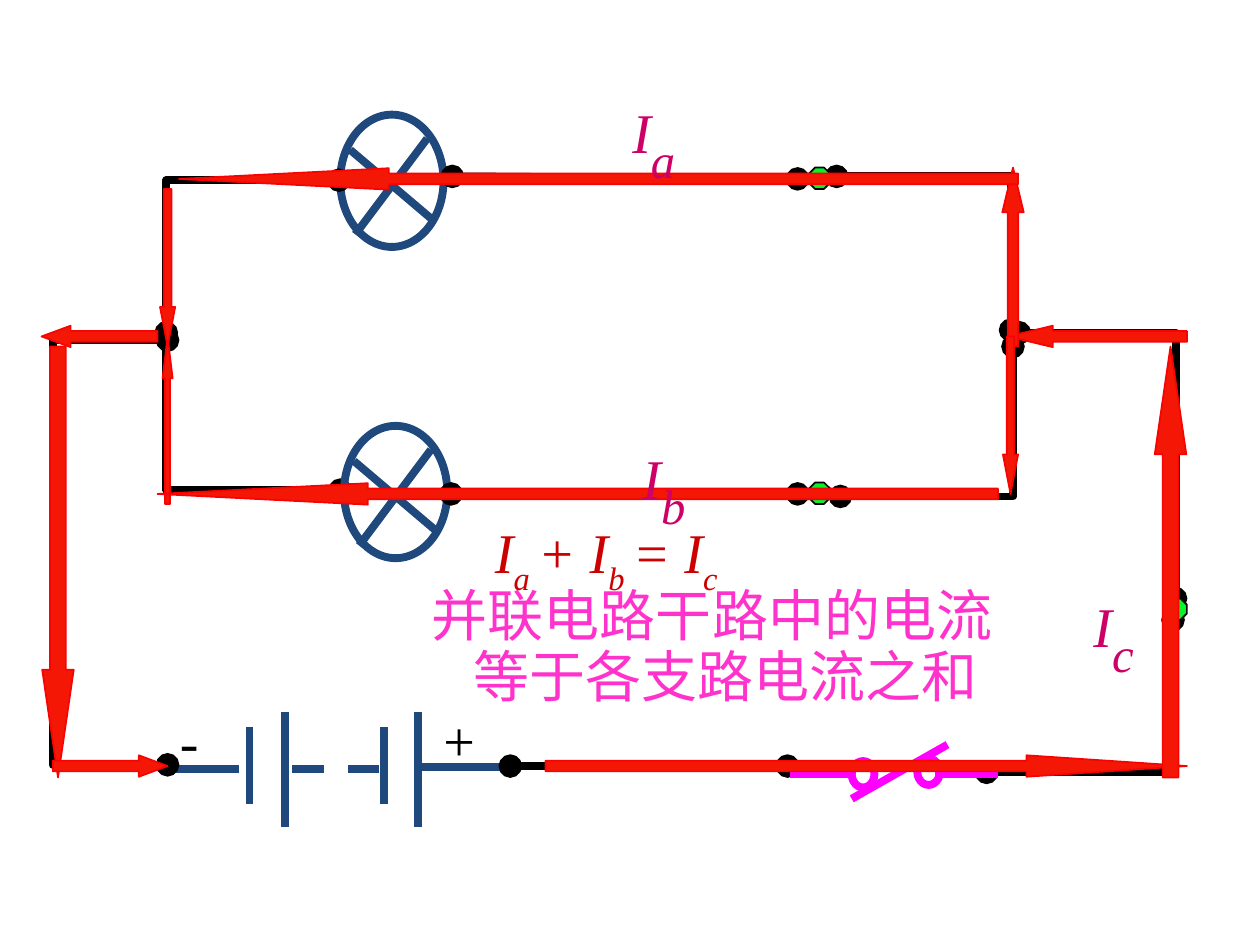
from math import atan2, degrees, hypot

from pptx import Presentation
from pptx.dml.color import RGBColor
from pptx.enum.dml import MSO_LINE
from pptx.enum.shapes import MSO_CONNECTOR, MSO_SHAPE
from pptx.enum.text import MSO_AUTO_SIZE
from pptx.oxml.ns import qn
from pptx.util import Inches, Pt
from lxml.etree import SubElement

COLORS = {
    "part": "1F497D", "wire": "000000", "switch": "FF00FF", "node": "08F229",
    "arrow": "F41706", "arrow_edge": "F70303", "label": "CC0066",
    "formula": "CC0000", "rule": "FF33CC",
}
FONT = "Times New Roman"
THICK = 4.5


def color(name):
    return RGBColor.from_string(COLORS[name])


def style_line(shape, color_name, width=THICK):
    shape.line.color.rgb = color(color_name)
    shape.line.width = Pt(width)


def add_shape(parent, kind, left, top, width, height, line, line_width=THICK, fill=None):
    shape = parent.add_shape(kind, Inches(left), Inches(top), Inches(width), Inches(height))
    shape.shadow.inherit = False
    if fill:
        shape.fill.solid()
        shape.fill.fore_color.rgb = color(fill)
    else:
        shape.fill.background()
    style_line(shape, line, line_width)
    return shape


def add_line(parent, start, end, color_name):
    points = [Inches(value) for value in (*start, *end)]
    line = parent.add_connector(MSO_CONNECTOR.STRAIGHT, *points)
    style_line(line, color_name)
    SubElement(line._element.spPr, qn("a:effectLst"))
    return line


def add_round_ends(shape):
    outline = shape._element.spPr.find(qn("a:ln"))
    SubElement(outline, qn("a:round"))
    for end in ("a:headEnd", "a:tailEnd"):
        SubElement(outline, qn(end), type="oval")


def add_wire(shapes, *points):
    """Black wire through the points, with a terminal dot at each end."""
    if len(points) == 2:
        wire = add_line(shapes, *points, "wire")
    else:
        corners = [(Inches(x), Inches(y)) for x, y in points]
        builder = shapes.build_freeform(*corners[0])
        builder.add_line_segments(corners[1:], close=False)
        wire = builder.convert_to_shape()
        wire.shadow.inherit = False
        wire.fill.background()
        style_line(wire, "wire")
    add_round_ends(wire)


def add_battery(shapes):
    group = shapes.add_group_shape().shapes
    for x, top, bottom in ((2.26, 5.65, 6.56), (1.98, 5.77, 6.38),
                           (3.32, 5.65, 6.56), (3.05, 5.77, 6.38)):
        add_line(group, (x, top), (x, bottom), "part")
    add_line(group, (4.12, 6.09), (3.32, 6.09), "part")
    add_line(group, (1.9, 6.1), (1.35, 6.1), "part")
    gap = add_line(group, (3.01, 6.1), (2.18, 6.1), "part")
    gap.line.dash_style = MSO_LINE.DASH


def add_bulb(shapes, left, top):
    group = shapes.add_group_shape().shapes
    add_shape(group, MSO_SHAPE.OVAL, left, top, 0.82, 1.05, "part")
    add_line(group, (left + 0.08, top + 0.28), (left + 0.74, top + 0.84), "part")
    add_line(group, (left + 0.69, top + 0.19), (left + 0.12, top + 0.95), "part")


def add_switch(shapes):
    group = shapes.add_group_shape().shapes
    for left in (6.27, 7.42):
        add_line(group, (left, 6.14), (left + 0.5, 6.14), "switch")
    for left, top in ((6.76, 6.04), (7.28, 6.02)):
        add_shape(group, MSO_SHAPE.OVAL, left, top, 0.18, 0.21, "switch")
    add_line(group, (6.76, 6.34), (7.52, 5.91), "switch")


def add_current(shapes, start, end, width):
    """Block arrow from start to end whose head takes a quarter of its length."""
    (x1, y1), (x2, y2) = start, end
    length = hypot(x2 - x1, y2 - y1)
    left, top = (x1 + x2 - length) / 2, (y1 + y2 - width) / 2
    arrow = add_shape(shapes, MSO_SHAPE.RIGHT_ARROW, left, top, length, width,
                      "arrow_edge", 1, "arrow")
    arrow.rotation = degrees(atan2(y2 - y1, x2 - x1)) % 360
    arrow.adjustments[1] = length / width / 4


def add_box(shapes, left, top, width, height):
    box = shapes.add_textbox(Inches(left), Inches(top), Inches(width), Inches(height))
    box.text_frame.word_wrap = True
    return box.text_frame


def add_span(para, text, color_name, size=32, italic=False, subscript=False):
    span = para.add_run()
    span.text = text
    span.font.name = FONT
    span.font.size = Pt(size)
    span.font.italic = italic
    span.font.color.rgb = color(color_name)
    if subscript:
        span.font._element.set("baseline", "-30000")


def space_before_half(para):
    spacing = SubElement(para._p.get_or_add_pPr(), qn("a:spcBef"))
    SubElement(spacing, qn("a:spcPct"), val="50000")


def add_sign(shapes, sign, left, top):
    frame = add_box(shapes, left, top, 1.02, 1.62)
    add_span(frame.paragraphs[0], sign, "wire")


def add_current_label(shapes, subscript, left, top):
    frame = add_box(shapes, left, top, 0.75, 0.9)
    frame.auto_size = MSO_AUTO_SIZE.SHAPE_TO_FIT_TEXT
    para = frame.paragraphs[0]
    space_before_half(para)
    add_span(para, "I", "label", italic=True)
    add_span(para, subscript, "label", 48, italic=True, subscript=True)


def add_conclusion(shapes):
    frame = add_box(shapes, 3.33, 4.25, 6.67, 1.47)
    frame.auto_size = MSO_AUTO_SIZE.SHAPE_TO_FIT_TEXT
    paras = [frame.paragraphs[0], frame.add_paragraph(), frame.add_paragraph()]
    for para, indent in zip(paras, (0.5, 0, 0.33)):
        para.line_spacing = 0.5
        space_before_half(para)
        para._p.get_or_add_pPr().set("marL", str(Inches(indent)))
    for symbol, subscript in (("I", "a "), ("+ I", "b "), ("= I", "c")):
        add_span(paras[0], symbol, "formula", italic=True)
        add_span(paras[0], subscript, "formula", italic=True, subscript=True)
    add_span(paras[1], "并联电路干路中的电流", "rule")
    add_span(paras[2], "等于各支路电流之和", "rule")


def main():
    deck = Presentation()
    deck.slide_width, deck.slide_height = Inches(10), Inches(7.5)
    shapes = deck.slides.add_slide(deck.slide_layouts[6]).shapes

    add_battery(shapes)
    add_wire(shapes, (9.31, 4.92), (9.31, 6.13), (7.83, 6.13))
    add_bulb(shapes, 2.7, 0.91)
    add_wire(shapes, (1.33, 6.07), (0.42, 6.07), (0.42, 2.7), (1.33, 2.7))
    add_wire(shapes, (3.59, 1.4), (6.33, 1.42))
    add_wire(shapes, (8.09, 2.64), (9.33, 2.64), (9.33, 4.75))
    add_wire(shapes, (1.32, 2.68), (1.32, 3.89), (2.7, 3.89))
    add_wire(shapes, (1.32, 2.64), (1.32, 1.43), (2.69, 1.43))
    add_bulb(shapes, 2.73, 3.38)
    add_wire(shapes, (4.05, 6.08), (6.25, 6.08))
    add_wire(shapes, (8.02, 2.62), (8.02, 1.4), (6.64, 1.4))
    add_wire(shapes, (8.04, 2.75), (8.04, 3.94), (6.67, 3.94))
    add_sign(shapes, "+", 3.42, 5.55)
    add_sign(shapes, "-", 1.33, 5.56)
    for left, top in ((6.42, 3.83), (6.42, 1.33), (9.25, 4.75)):
        add_shape(shapes, MSO_SHAPE.OCTAGON, left, top, 0.17, 0.17, "wire", 1, "node")
    add_wire(shapes, (3.58, 3.92), (6.33, 3.92))
    add_switch(shapes)

    currents = (
        ((4.33, 6.08), (9.42, 6.08), 0.17),
        ((9.29, 6.17), (9.29, 2.75), 0.25),
        ((9.42, 2.67), (8, 2.67), 0.17),
        ((8.04, 2.75), (8.04, 1.33), 0.17),
        ((8.08, 1.42), (1.42, 1.42), 0.17),
        ((1.33, 4), (1.33, 2.67), 0.08),
        ((1.33, 1.5), (1.33, 2.75), 0.12),
        ((8.02, 2.67), (8.02, 3.92), 0.12),
        ((7.92, 3.92), (1.25, 3.92), 0.17),
        ((1.25, 2.67), (0.33, 2.67), 0.17),
        ((0.46, 2.75), (0.46, 6.17), 0.25),
        ((0.42, 6.08), (1.33, 6.08), 0.17),
    )
    for start, end, width in currents:
        add_current(shapes, start, end, width)

    add_conclusion(shapes)
    for subscript, left, top in (("a", 4.92, 0.5), ("b", 5, 3.25), ("c", 8.58, 4.42)):
        add_current_label(shapes, subscript, left, top)
    deck.save("out.pptx")


if __name__ == "__main__":
    main()
